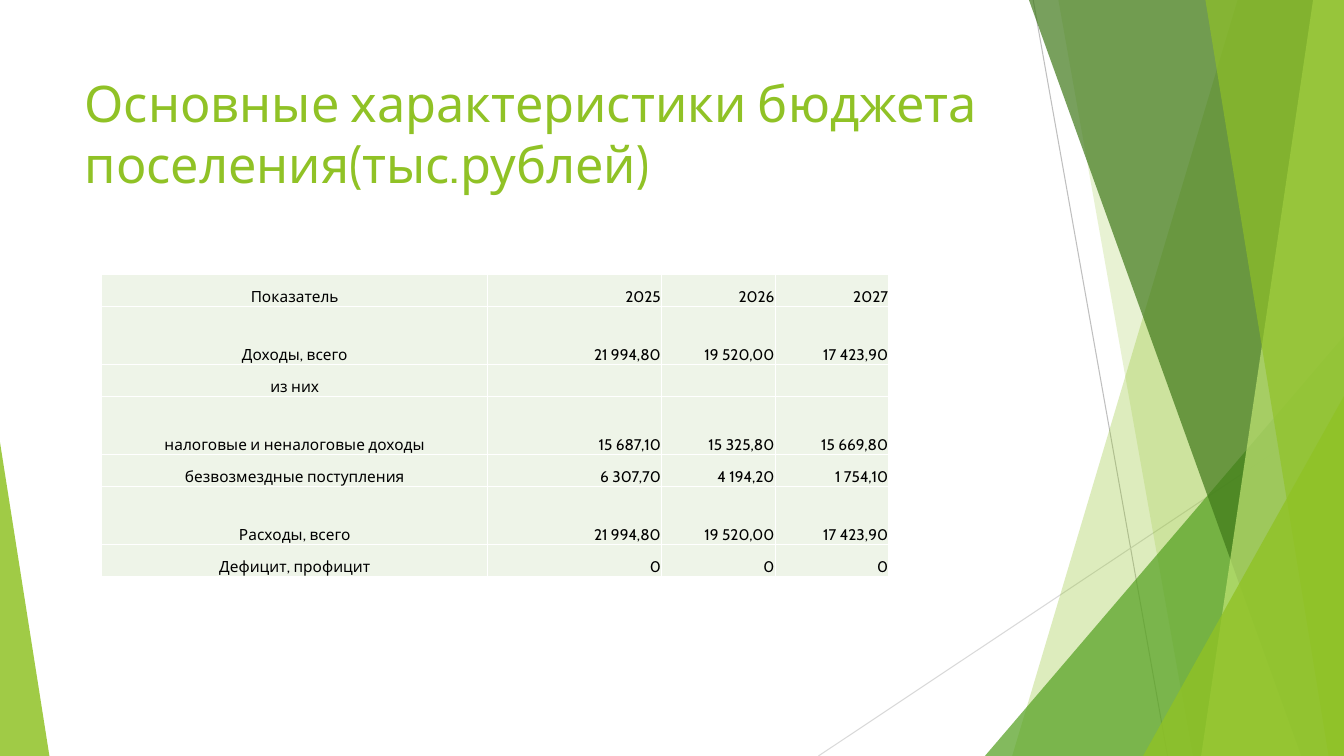
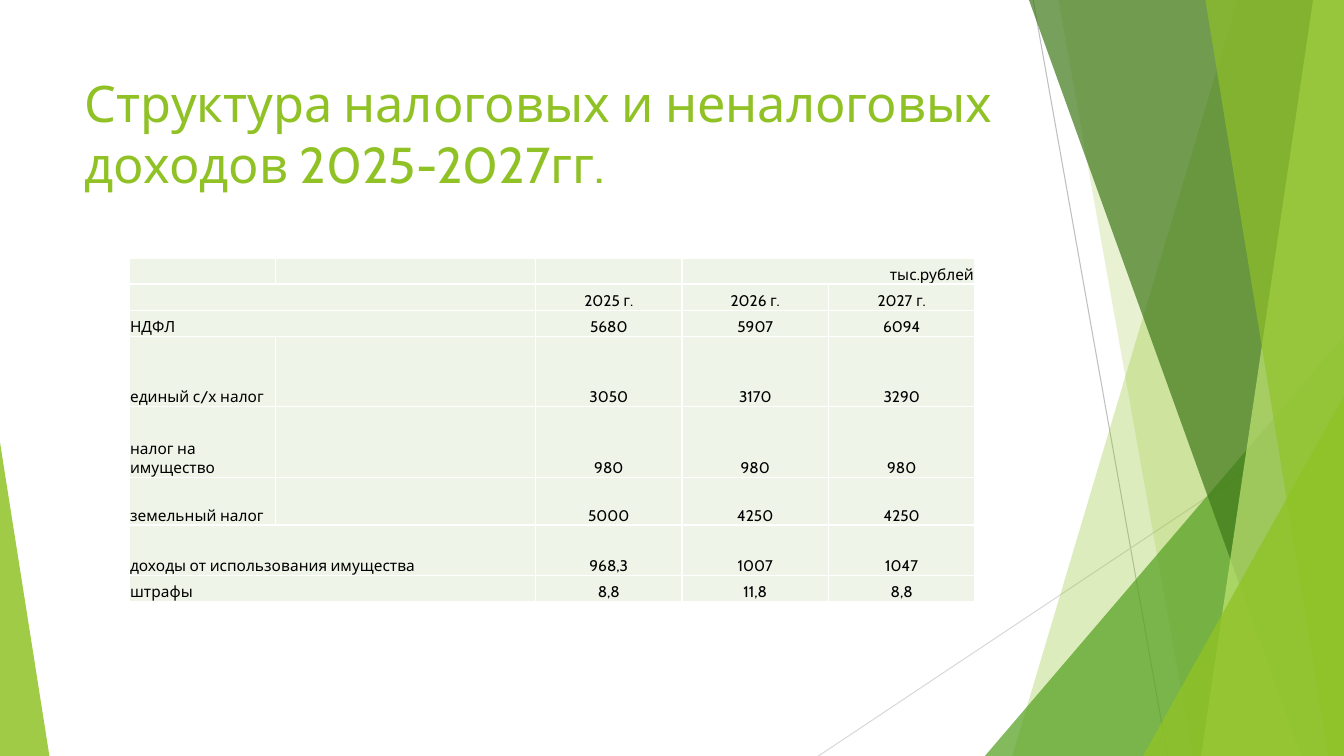
import lxml.etree
import pptx
import pptx.dml.color
import pptx.enum.shapes
import pptx.enum.text
import pptx.oxml.ns
import pptx.util

Pt = pptx.util.Pt
ALIGN = pptx.enum.text.PP_ALIGN
ANCHOR = pptx.enum.text.MSO_ANCHOR
qn = pptx.oxml.ns.qn

WIDTH, HEIGHT = 960, 540
FONT = "Cabin"
COLORS = {
    "lime": "90C226",
    "green": "54A021",
    "forest": "3F7819",
    "pale": "C0E474",
    "cell": "EEF4E8",
    "white": "FFFFFF",
    "black": "000000",
    "grey": "BFBFBF",
    "mist": "D9D9D9",
}


def rgb(color):
    return pptx.dml.color.RGBColor.from_string(COLORS[color])


def write(frame, text, *, size, color="black", align=ALIGN.LEFT):
    paragraph = frame.paragraphs[0]
    paragraph.alignment = align
    if not text:
        lxml.etree.SubElement(paragraph._p, qn("a:endParaRPr"), sz=str(size * 100))
        return
    run = paragraph.add_run()
    run.text = text
    run.font.name = FONT
    run.font.size = Pt(size)
    run.font.color.rgb = rgb(color)


class Deck:
    def __init__(self):
        self.presentation = pptx.Presentation()
        self.presentation.slide_width = Pt(WIDTH)
        self.presentation.slide_height = Pt(HEIGHT)
        self.layout = self.presentation.slide_layouts[5]
        for holder in list(self.layout.placeholders):
            if holder.placeholder_format.idx:
                holder.element.getparent().remove(holder.element)
        self.slide = None

    def add_slide(self, heading):
        first = self.slide is None
        self.slide = self.presentation.slides.add_slide(self.layout)
        if first:
            self.backdrop()
        self.title(heading)

    def title(self, heading):
        title = self.slide.shapes.title
        title.left, title.top = Pt(53.3), Pt(48)
        title.width, title.height = Pt(677), Pt(104)
        frame = title.text_frame
        frame.word_wrap = True
        frame.auto_size = pptx.enum.text.MSO_AUTO_SIZE.NONE
        frame.vertical_anchor = ANCHOR.TOP
        write(frame, heading, size=36, color="lime")

    def line(self, start, end, color):
        line = self.slide.shapes.add_connector(
            pptx.enum.shapes.MSO_CONNECTOR.STRAIGHT, *map(Pt, start + end))
        line.line.color.rgb = rgb(color)
        line.line.width = Pt(0.75)
        lxml.etree.SubElement(line.element.spPr, qn("a:effectLst"))
        return line

    def tint(self, shape, color, opacity):
        shape.shadow.inherit = False
        shape.fill.solid()
        shape.fill.fore_color.rgb = rgb(color)
        shape.line.fill.background()
        paint = shape.element.spPr.find(".//" + qn("a:srgbClr"))
        lxml.etree.SubElement(paint, qn("a:alpha"), val=str(opacity * 1000))
        return shape

    def band(self, top_x, bottom_x, color, opacity):
        outline = self.slide.shapes.build_freeform(Pt(top_x), 0)
        corners = [(WIDTH, 0), (WIDTH, HEIGHT), (bottom_x, HEIGHT)]
        outline.add_line_segments([(Pt(x), Pt(y)) for x, y in corners])
        return self.tint(outline.convert_to_shape(), color, opacity)

    def wedge(self, left, top, width, apex, color, opacity):
        wedge = self.slide.shapes.add_shape(
            pptx.enum.shapes.MSO_SHAPE.ISOSCELES_TRIANGLE,
            Pt(left), Pt(top), Pt(width), Pt(HEIGHT - top))
        wedge.adjustments[0] = apex
        return self.tint(wedge, color, opacity)

    def backdrop(self):
        facets = [
            self.line((738, 0), (834, HEIGHT), "grey"),
            self.line((WIDTH, 290), (584.6, HEIGHT), "mist"),
            self.band(884, 723, "lime", 30),
            self.band(756, 852, "lime", 20),
            self.wedge(703.5, 240, 256.5, 1, "green", 72),
            self.band(735, 929.5, "forest", 70),
            self.band(938, 858, "pale", 70),
            self.band(861, 949, "lime", 65),
            self.wedge(816.5, 283, 143.5, 1, "lime", 80),
            self.wedge(0, 316, 35.3, 0, "lime", 85),
        ]
        layout_title = self.layout.placeholders[0].element
        for facet in facets:
            layout_title.addprevious(facet.element)

    def cell(self, cell, text, align):
        cell.margin_left = cell.margin_right = cell.margin_top = Pt(0.7)
        cell.margin_bottom = 0
        cell.vertical_anchor = ANCHOR.BOTTOM
        cell.fill.solid()
        cell.fill.fore_color.rgb = rgb("cell")
        properties = cell._tc.get_or_add_tcPr()
        for position, side in enumerate(("lnL", "lnR", "lnT", "lnB")):
            border = lxml.etree.Element(qn("a:" + side), w=str(Pt(1)))
            fill = lxml.etree.SubElement(border, qn("a:solidFill"))
            lxml.etree.SubElement(fill, qn("a:srgbClr"), val=COLORS["white"])
            properties.insert(position, border)
        write(cell.text_frame, text, size=11, align=align)

    def table(self, left, top, widths, heights, rows, aligns, merges=(), exceptions=None):
        table = self.slide.shapes.add_table(
            len(rows), len(widths), Pt(left), Pt(top),
            Pt(sum(widths)), Pt(sum(heights))).table
        table.first_row = table.horz_banding = False
        for column, width in zip(table.columns, widths):
            column.width = Pt(width)
        for row, height in zip(table.rows, heights):
            row.height = Pt(height)
        for r, values in enumerate(rows):
            for c, value in enumerate(values):
                align = (exceptions or {}).get((r, c), aligns[c])
                self.cell(table.cell(r, c), value, align)
        for r, start, end in merges:
            table.cell(r, start).merge(table.cell(r, end))


def main():
    deck = Deck()

    deck.add_slide("Основные характеристики бюджета поселения(тыс.рублей)")
    budget = [
        ("Показатель", "2025", "2026", "2027"),
        ("Доходы, всего", "21 994,80", "19 520,00", "17 423,90"),
        ("из них", "", "", ""),
        ("налоговые и неналоговые доходы", "15 687,10", "15 325,80", "15 669,80"),
        ("безвозмездные поступления", "6 307,70", "4 194,20", "1 754,10"),
        ("Расходы, всего", "21 994,80", "19 520,00", "17 423,90"),
        ("Дефицит, профицит", "0", "0", "0"),
    ]
    deck.table(72.7, 196, [275.7, 124.3, 81.2, 81.2],
               [22.8, 41.5] * 3 + [22.8], budget,
               [ALIGN.CENTER] + [ALIGN.RIGHT] * 3)

    deck.add_slide("Структура налоговых и неналоговых доходов 2025-2027гг.")
    revenues = [
        ("", "", "", "тыс.рублей", ""),
        ("", "", "2025 г.", "2026 г.", "2027 г."),
        ("НДФЛ", "", "5680", "5907", "6094"),
        ("единый с/х налог", "", "3050", "3170", "3290"),
        ("налог на имущество", "", "980", "980", "980"),
        ("земельный налог", "", "5000", "4250", "4250"),
        ("доходы от использования имущества", "", "968,3", "1007", "1047"),
        ("штрафы", "", "8,8", "11,8", "8,8"),
    ]
    deck.table(92.2, 184.3, [104.6, 185.8] + [104.6] * 3,
               [18.6] * 3 + [50.5, 50.5, 34, 35.8, 18.6], revenues,
               [ALIGN.LEFT] * 2 + [ALIGN.CENTER] * 3,
               merges=[(0, 3, 4)] + [(r, 0, 1) for r in (1, 2, 6, 7)],
               exceptions={(0, 3): ALIGN.RIGHT})

    deck.presentation.save("out.pptx")


if __name__ == "__main__":
    main()
